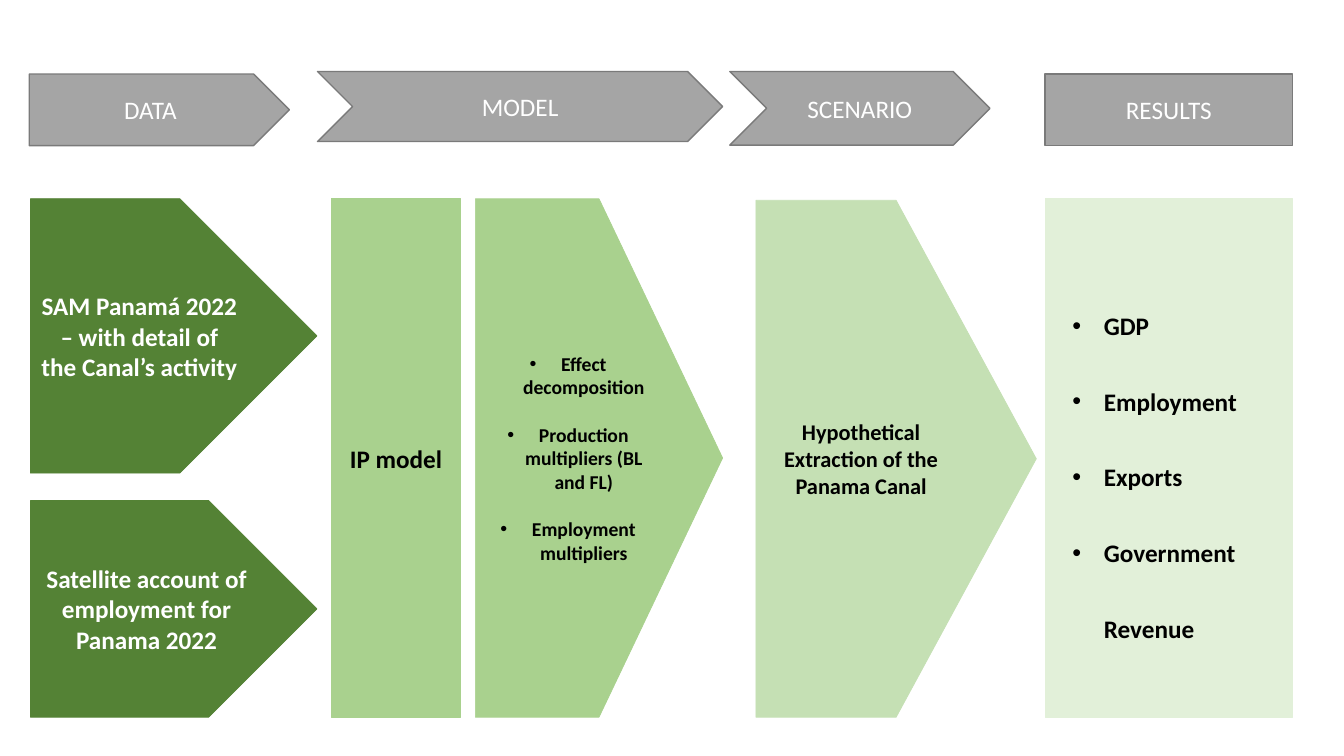
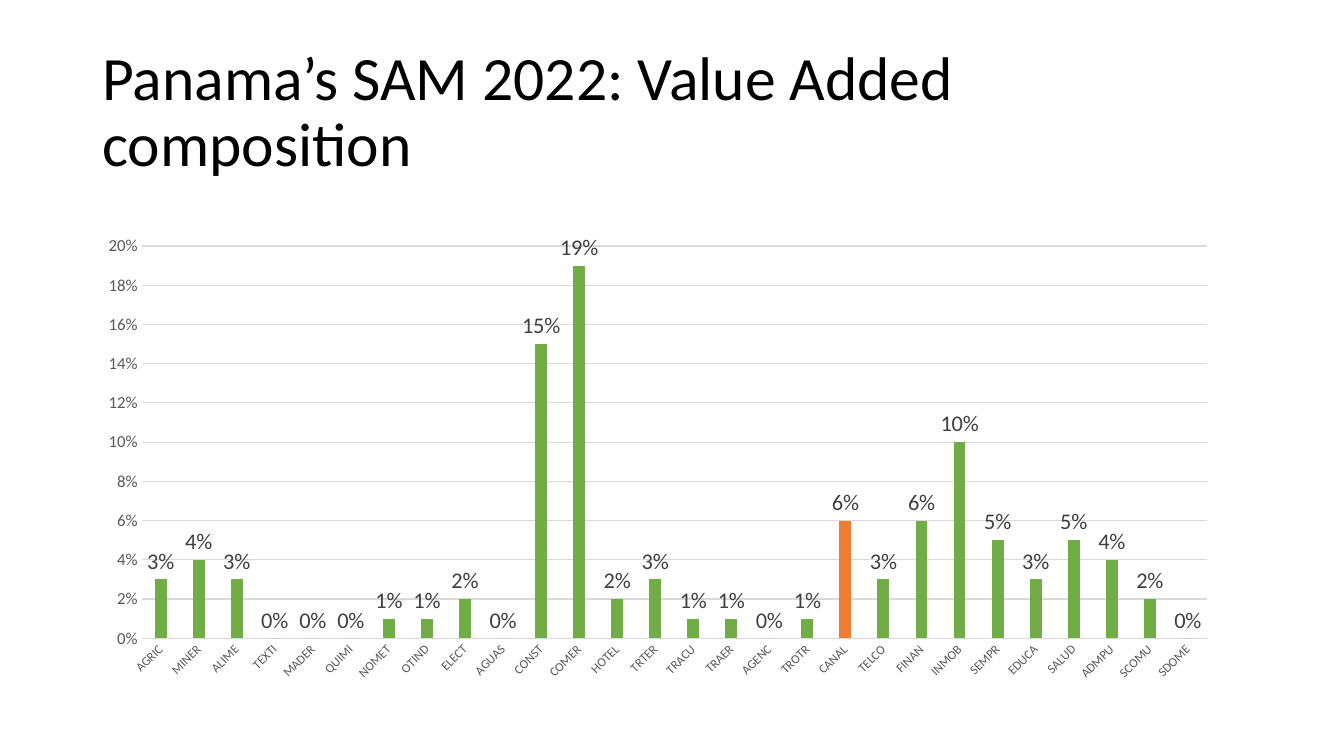
from lxml.etree import SubElement
from pptx import Presentation
from pptx.chart.data import CategoryChartData
from pptx.dml.color import RGBColor
from pptx.enum.chart import XL_CHART_TYPE as ChartType
from pptx.enum.chart import XL_LABEL_POSITION as LabelPos
from pptx.enum.chart import XL_TICK_MARK as Tick
from pptx.enum.shapes import MSO_SHAPE as Shape
from pptx.enum.text import MSO_ANCHOR as Anchor
from pptx.enum.text import PP_ALIGN as Align
from pptx.oxml.ns import qn
from pptx.util import Pt

# Shared style
FONT = "Calibri"
WHITE, BLACK = "FFFFFF", "000000"
GRAY, GRAY_EDGE = "A5A5A5", "7A7A7A"
DARK, MID, LIGHT, PALE = "548235", "A9D18E", "C5E0B4", "E2F0D9"
BAR, CANAL_BAR = "70AD47", "ED7D31"
AXIS_TEXT, LABEL_TEXT, GRID = "595959", "404040", "D9D9D9"
BULLET_INDENT = 22.5

# Slide 1: stage banners (text, preset, left, top, width, height)
BANNERS = [
    ("DATA", Shape.PENTAGON, 20.9, 52.9, 185.8, 51.1),
    ("MODEL", Shape.CHEVRON, 226.8, 51.1, 289.4, 50),
    ("SCENARIO", Shape.CHEVRON, 521.3, 51.1, 185.8, 52.6),
    ("RESULTS", Shape.RECTANGLE, 746.6, 52.9, 176.6, 51.1),
]

# Slide 1: stage contents (paragraphs, preset, box, fill, text colour, size)
BODY_TOP, BODY_H = 142, 370.3
STAGES = [
    (["SAM Panamá 2022 – with detail of the Canal’s activity"],
     Shape.PENTAGON, (21.7, BODY_TOP, 204.7, 196), DARK, WHITE, 18),
    (["Satellite account of employment for Panama 2022"],
     Shape.PENTAGON, (21.7, 357.5, 204.7, 154.8), DARK, WHITE, 18),
    (["IP model"],
     Shape.RECTANGLE, (236.7, BODY_TOP, 92.4, BODY_H), MID, BLACK, 18),
    (["Effect decomposition", "Production multipliers (BL and FL)",
      "Employment multipliers"],
     Shape.PENTAGON, (339.6, BODY_TOP, 176.6, BODY_H), MID, BLACK, 14),
    (["Hypothetical Extraction of the Panama Canal"],
     Shape.PENTAGON, (540, 143.1, 200.2, 369.2), LIGHT, BLACK, 16),
    ([], Shape.RECTANGLE, (746.6, BODY_TOP, 176.6, BODY_H), PALE, BLACK, 18),
]
RESULTS = ["GDP", "Employment", "Exports", "Government Revenue"]
RESULTS_BOX = (758.9, 185.8, 153.4, 270.7)

# Slide 2: title and chart
TITLE = "Panama’s SAM 2022: Value Added composition"
TITLE_BOX = (66, 28.8, 828, 104.4)
CHART_BOX = (61.2, 162, 817.2, 331.2)
SHARES = {
    "AGRIC": 0.03, "MINER": 0.04, "ALIME": 0.03, "TEXTI": 0, "MADER": 0,
    "QUIMI": 0, "NOMET": 0.01, "OTIND": 0.01, "ELECT": 0.02, "AGUAS": 0,
    "CONST": 0.15, "COMER": 0.19, "HOTEL": 0.02, "TRTER": 0.03,
    "TRACU": 0.01, "TRAER": 0.01, "AGENC": 0, "TROTR": 0.01, "CANAL": 0.06,
    "TELCO": 0.03, "FINAN": 0.06, "INMOB": 0.1, "SEMPR": 0.05,
    "EDUCA": 0.03, "SALUD": 0.05, "ADMPU": 0.04, "SCOMU": 0.02, "SDOME": 0,
}
HIGHLIGHT = "CANAL"


def rgb(code):
    return RGBColor.from_string(code)


def points(box):
    return [Pt(length) for length in box]


def apply(target, values):
    for name, value in values.items():
        setattr(target, name, value)


def set_font(font, size, color, bold=False):
    apply(font, {"name": FONT, "size": Pt(size), "bold": bold})
    font.color.rgb = rgb(color)


def set_line(line, color, width):
    line.color.rgb = rgb(color)
    line.width = Pt(width)


def set_fill(fill, color):
    fill.solid()
    fill.fore_color.rgb = rgb(color)


def add_bullet(paragraph):
    props = paragraph._p.get_or_add_pPr()
    props.set("marL", str(Pt(BULLET_INDENT)))
    props.set("indent", str(-Pt(BULLET_INDENT)))
    SubElement(props, qn("a:buFont"), typeface="Arial")
    SubElement(props, qn("a:buChar"), char="•")


def write(frame, texts, size, color, bold=False, bullets=False, gap=0,
          anchor=Anchor.MIDDLE, **layout):
    apply(frame, {"word_wrap": True, "vertical_anchor": anchor})
    for i, text in enumerate(texts):
        paragraph = frame.add_paragraph() if i else frame.paragraphs[0]
        if bullets:
            add_bullet(paragraph)
        apply(paragraph, layout)
        if i and gap:
            paragraph.space_before = Pt(gap)
        run = paragraph.add_run()
        run.text = text
        set_font(run.font, size, color, bold)


def add_block(slide, preset, box, fill, edge, edge_width):
    block = slide.shapes.add_shape(preset, *points(box))
    block.shadow.inherit = False
    set_fill(block.fill, fill)
    set_line(block.line, edge, edge_width)
    return block.text_frame


def build_flow(slide):
    # Stage banners
    for text, preset, *box in BANNERS:
        frame = add_block(slide, preset, box, GRAY, GRAY_EDGE, 1)
        write(frame, [text], 18, WHITE, alignment=Align.CENTER)

    # Stage contents
    for texts, preset, box, fill, color, size in STAGES:
        frame = add_block(slide, preset, box, fill, fill, 0.5)
        write(frame, texts, size, color, bold=True, bullets=len(texts) > 1,
              gap=17, alignment=Align.CENTER)

    # Results list
    results = slide.shapes.add_textbox(*points(RESULTS_BOX))
    write(results.text_frame, RESULTS, 18, BLACK, bold=True, bullets=True,
          anchor=Anchor.TOP, line_spacing=2.5)


def build_composition(slide):
    title = slide.shapes.add_textbox(*points(TITLE_BOX))
    write(title.text_frame, [TITLE], 44, BLACK, line_spacing=0.9)

    # Value added chart
    data = CategoryChartData(number_format="0%")
    data.categories = list(SHARES)
    data.add_series("Value added", list(SHARES.values()))
    chart = slide.shapes.add_chart(
        ChartType.COLUMN_CLUSTERED, *points(CHART_BOX), data).chart
    apply(chart, {"has_legend": False, "has_title": False})
    set_font(chart.font, 10, BLACK)

    # Columns and their labels
    plot = chart.plots[0]
    apply(plot, {"gap_width": 219, "overlap": -27,
                 "vary_by_categories": False, "has_data_labels": True})
    apply(plot.data_labels, {
        "show_value": True, "position": LabelPos.OUTSIDE_END,
        "number_format": "0%", "number_format_is_linked": False})
    set_font(plot.data_labels.font, 16, LABEL_TEXT)
    shares = plot.series[0]
    set_fill(shares.format.fill, BAR)
    canal = shares.points[list(SHARES).index(HIGHLIGHT)]
    set_fill(canal.format.fill, CANAL_BAR)

    # Axes
    sectors, percent = chart.category_axis, chart.value_axis
    for axis, size in ((sectors, 9), (percent, 12)):
        apply(axis, {"major_tick_mark": Tick.NONE,
                     "minor_tick_mark": Tick.NONE})
        set_font(axis.tick_labels.font, size, AXIS_TEXT)
    set_line(sectors.format.line, GRID, 0.75)
    label_body = sectors._element.find(qn("c:txPr")).find(qn("a:bodyPr"))
    label_body.set("rot", "-2700000")
    apply(percent, {"minimum_scale": 0, "maximum_scale": 0.2,
                    "major_unit": 0.02, "has_major_gridlines": True})
    apply(percent.tick_labels, {"number_format": "0%",
                                "number_format_is_linked": False})
    percent.format.line.fill.background()
    set_line(percent.major_gridlines.format.line, GRID, 0.75)


def main():
    deck = Presentation()
    apply(deck, {"slide_width": Pt(960), "slide_height": Pt(540)})
    for build in (build_flow, build_composition):
        build(deck.slides.add_slide(deck.slide_layouts[6]))
    deck.save("out.pptx")


if __name__ == "__main__":
    main()
